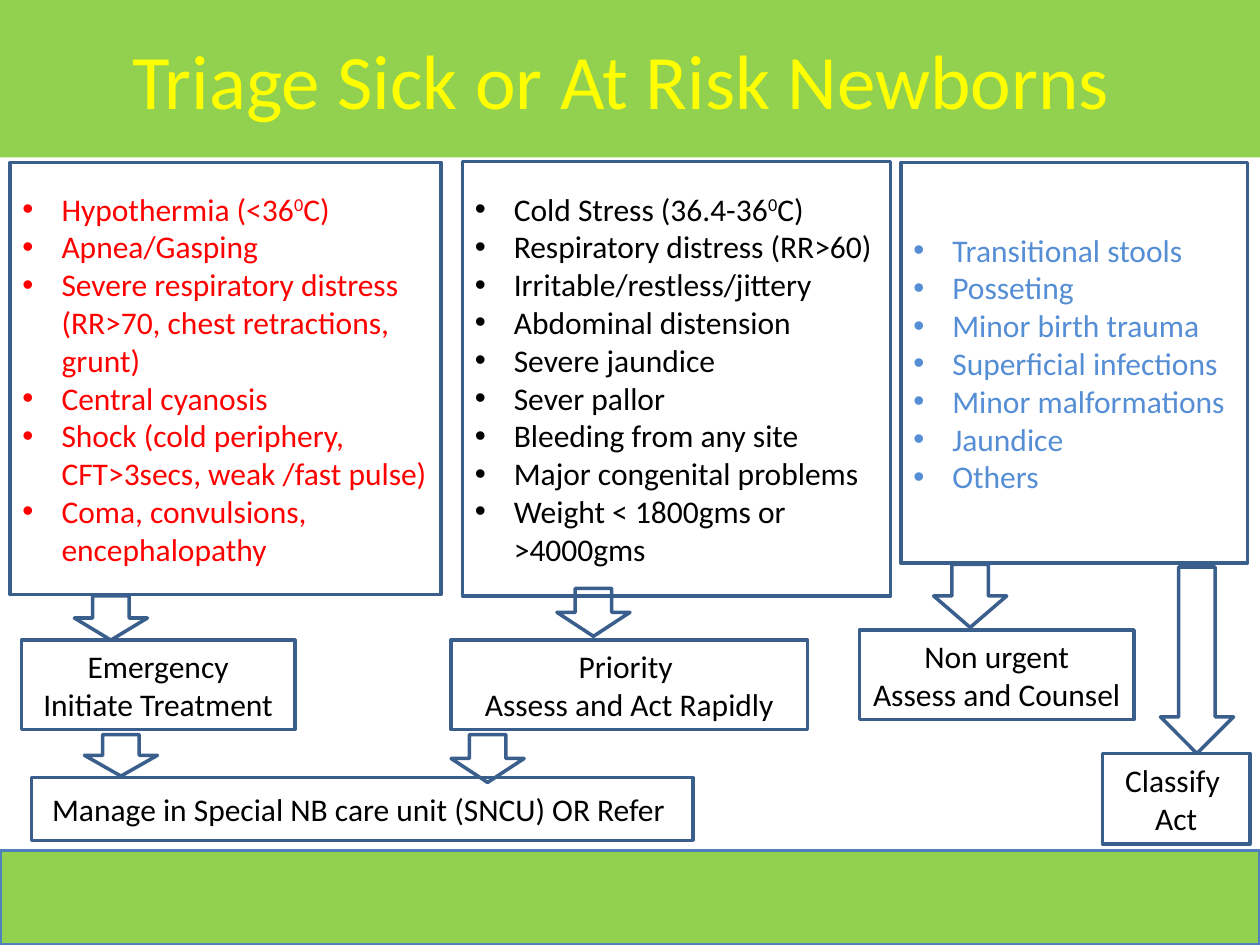
import pptx
import pptx.dml.color
import pptx.enum.shapes
import pptx.enum.text
import pptx.oxml.ns
import pptx.util
from lxml import etree

Inches = pptx.util.Inches
Pt = pptx.util.Pt
RGBColor = pptx.dml.color.RGBColor
SHAPE = pptx.enum.shapes.MSO_SHAPE
ALIGN = pptx.enum.text.PP_ALIGN
MIDDLE = pptx.enum.text.MSO_ANCHOR.MIDDLE

GREEN = RGBColor(0x92, 0xD0, 0x50)
YELLOW = RGBColor(0xFF, 0xFF, 0x00)
NAVY = RGBColor(0x3A, 0x5F, 0x8C)
BLUE = RGBColor(0x4F, 0x81, 0xBD)
RED = RGBColor(0xFF, 0x00, 0x00)
BLACK = RGBColor(0x00, 0x00, 0x00)
SKY = RGBColor(0x55, 0x8E, 0xD5)

FONT = "Calibri"
INDENT = Inches(0.31)
ARROW_WIDTH = 0.58

# Text between carets is superscript.
SIGNS = [
    ((0.08, 1.29, 3.42, 3.43), RED, [
        "Hypothermia (<36^0^C)",
        "Apnea/Gasping",
        "Severe respiratory distress (RR>70, chest retractions, grunt)",
        "Central cyanosis",
        "Shock (cold periphery, CFT>3secs, weak /fast pulse)",
        "Coma, convulsions, encephalopathy",
    ]),
    ((3.67, 1.28, 3.4, 3.45), BLACK, [
        "Cold Stress (36.4-36^0^C)",
        "Respiratory distress (RR>60)",
        "Irritable/restless/jittery",
        "Abdominal distension",
        "Severe jaundice",
        "Sever pallor",
        "Bleeding from any site",
        "Major congenital problems",
        "Weight < 1800gms or >4000gms",
    ]),
    ((7.15, 1.29, 2.75, 3.18), SKY, [
        "Transitional stools",
        "Posseting",
        "Minor birth trauma",
        "Superficial infections",
        "Minor malformations",
        "Jaundice",
        "Others",
    ]),
]

ACTIONS = [
    ((0.17, 5.08, 2.17, 0.71), ["Emergency", "Initiate Treatment"]),
    ((3.58, 5.08, 2.83, 0.71), ["Priority ", "Assess and Act Rapidly"]),
    ((6.82, 5, 2.18, 0.71), ["Non urgent", "Assess and Counsel"]),
    ((8.75, 5.98, 1.17, 0.72), ["Classify ", "Act"]),
    ((0.25, 6.17, 5.25, 0.5),
     ["Manage in Special NB care unit (SNCU) OR Refer "]),
]

# Left, top and height of each arrow.
ARROWS = [
    (0.59, 4.73, 0.35),
    (4.42, 4.67, 0.38),
    (7.41, 4.48, 0.5),
    (9.21, 4.5, 1.48),
    (0.67, 5.83, 0.33),
    (3.58, 5.83, 0.38),
]


def add_outline(s, kind, box, line=NAVY):
    sp = s.shapes.add_shape(kind, *map(Inches, box))
    sp.shadow.inherit = False
    sp.fill.background()
    sp.line.color.rgb = line
    sp.line.width = Pt(2)
    return sp


def add_bullet(p):
    pPr = p._p.get_or_add_pPr()
    pPr.set("marL", str(INDENT))
    pPr.set("indent", str(-INDENT))
    for tag, name, value in (("a:buFont", "typeface", "Arial"),
                             ("a:buChar", "char", "•")):
        etree.SubElement(pPr, pptx.oxml.ns.qn(tag)).set(name, value)


def add_runs(p, text, color):
    """Write text, raising the parts between carets."""
    for i, part in enumerate(text.split("^")):
        r = p.add_run()
        r.text = part
        r.font.name = FONT
        r.font.size = Pt(18)
        r.font.color.rgb = color
        if i % 2:
            r.font._element.set("baseline", "30000")


def add_text_box(s, box, lines, color=BLACK, bulleted=False):
    tf = add_outline(s, SHAPE.RECTANGLE, box).text_frame
    tf.word_wrap = True
    tf.vertical_anchor = MIDDLE
    for i, line in enumerate(lines):
        p = tf.add_paragraph() if i else tf.paragraphs[0]
        p.alignment = ALIGN.LEFT if bulleted else ALIGN.CENTER
        if bulleted:
            add_bullet(p)
        add_runs(p, line, color)


def set_title(s, text):
    title = s.shapes.title
    title.left, title.top = Inches(0), Inches(0)
    title.width, title.height = Inches(10), Inches(1.25)
    title.fill.solid()
    title.fill.fore_color.rgb = GREEN
    tf = title.text_frame
    tf.text = text
    tf.vertical_anchor = MIDDLE
    p = tf.paragraphs[0]
    p.alignment = ALIGN.CENTER
    font = p.runs[0].font
    font.name = FONT
    font.size = Pt(44)
    font.color.rgb = YELLOW


def main():
    prs = pptx.Presentation()
    prs.slide_width, prs.slide_height = Inches(10), Inches(7.5)
    s = prs.slides.add_slide(prs.slide_layouts[5])
    set_title(s, "Triage Sick or At Risk Newborns ")
    footer = add_outline(s, SHAPE.RECTANGLE, (0, 6.75, 10, 0.75), BLUE)
    footer.fill.solid()
    footer.fill.fore_color.rgb = GREEN
    for box, color, lines in SIGNS:
        add_text_box(s, box, lines, color, bulleted=True)
    for box, lines in ACTIONS:
        add_text_box(s, box, lines)
    for left, top, height in ARROWS:
        add_outline(s, SHAPE.DOWN_ARROW, (left, top, ARROW_WIDTH, height))
    prs.save("out.pptx")


if __name__ == "__main__":
    main()
